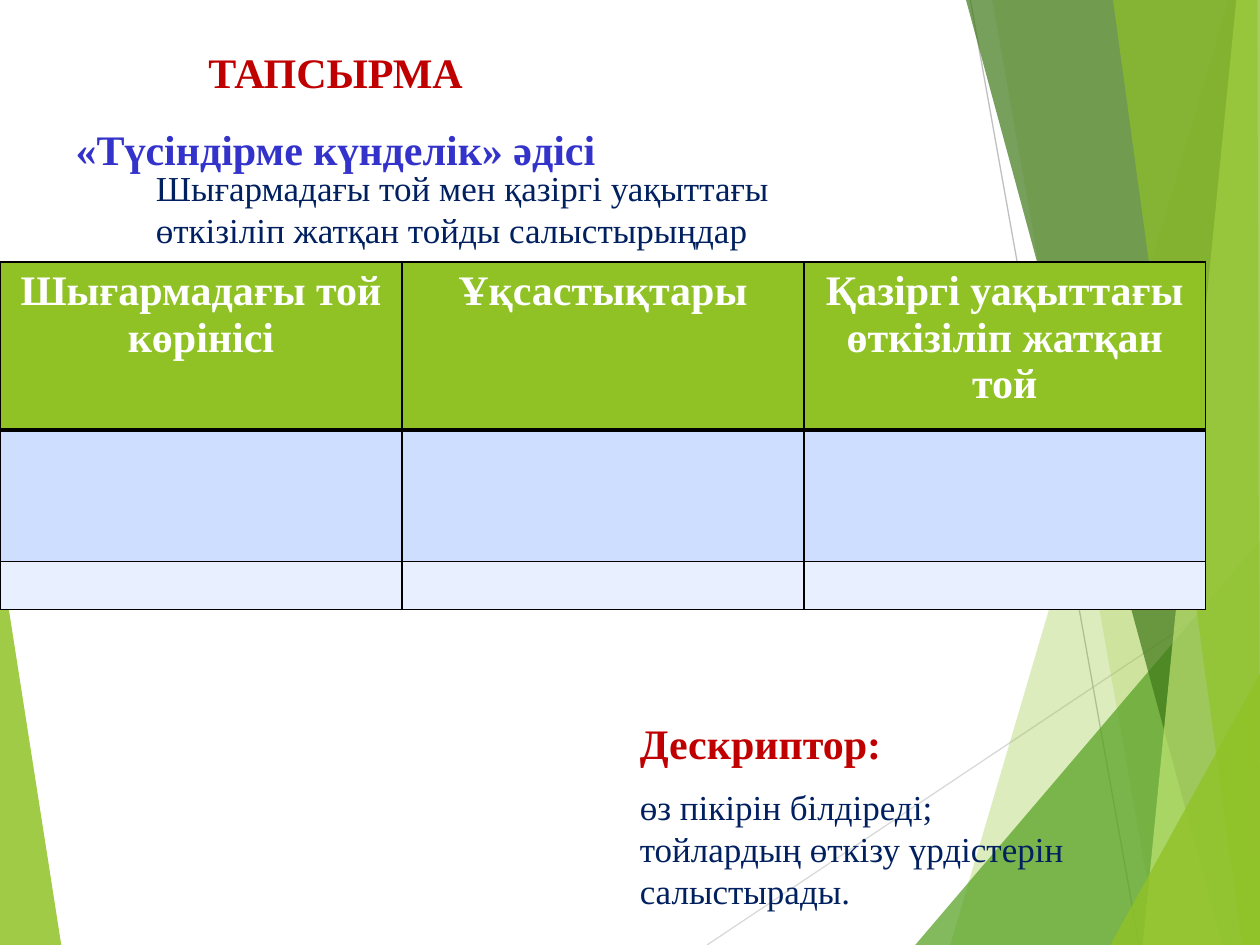
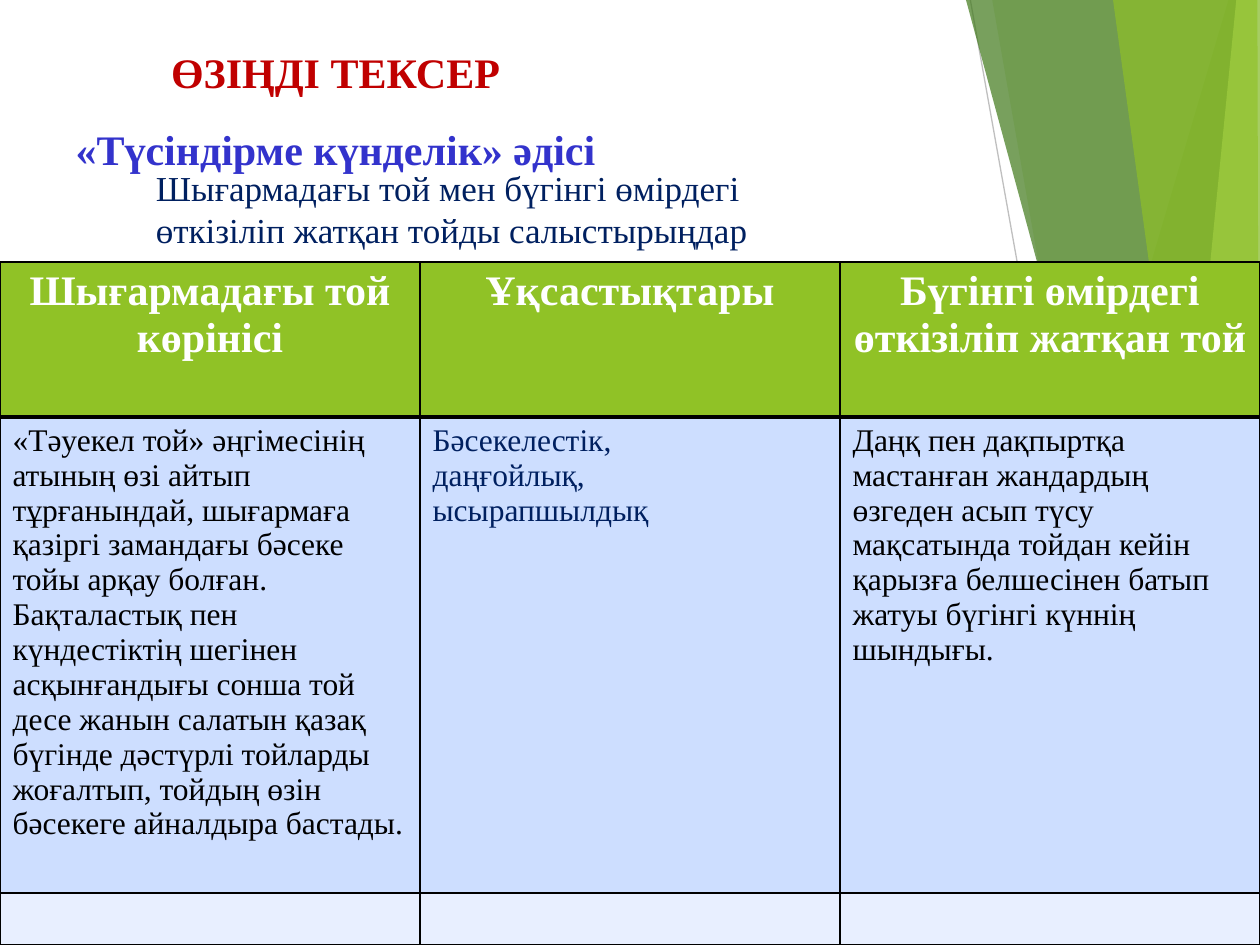
from lxml import etree
from pptx import Presentation
from pptx.dml.color import RGBColor
from pptx.enum.shapes import MSO_CONNECTOR
from pptx.enum.text import PP_ALIGN
from pptx.oxml.ns import qn
from pptx.util import Pt

STRAIGHT = MSO_CONNECTOR.STRAIGHT
CENTER, LEFT = PP_ALIGN.CENTER, PP_ALIGN.LEFT
FONT = "Times New Roman"
COLORS = {
    "lime": "90C226", "green": "54A021", "forest": "3F7819", "pale": "C0E474",
    "red": "C00000", "blue": "3333CC", "navy": "002060",
    "white": "FFFFFF", "black": "000000",
    "band": "CDDEFF", "light_band": "E8EFFF",
    "ray": "D9D9D9", "dark_ray": "BFBFBF",
}

# Background facets: colour, opacity in percent, corners
FACETS = [
    ("lime", 85, [(0, 316), (35, 540), (0, 540)]),
    ("lime", 30, [(702, 0), (543, 540), (720, 540), (720, 0)]),
    ("lime", 20, [(567, 0), (662, 540), (720, 540), (720, 0)]),
    ("green", 72, [(523, 540), (720, 309), (720, 540)]),
    ("forest", 70, [(552, 0), (698.5, 540), (720, 540), (720, 0)]),
    ("pale", 70, [(706.5, 0), (653, 540), (720, 540), (720, 0)]),
    ("lime", 65, [(636, 0), (710, 540), (720, 540), (718.5, 0)]),
    ("lime", 80, [(634.5, 540), (720, 385), (720, 540)]),
]
RAYS = [("ray", (404, 540, 720, 329)), ("dark_ray", (554.5, 0, 651, 540))]

# Text styles: colour, alignment and font attributes
STYLES = {
    "title": ("red", CENTER, {"size": Pt(24), "bold": True}),
    "method": ("blue", CENTER, {"size": Pt(24), "bold": True}),
    "heading": ("red", LEFT, {"size": Pt(24), "bold": True}),
    "task": ("navy", LEFT, {"size": Pt(20), "bold": False}),
    "header": ("white", CENTER, {"size": Pt(24), "bold": True}),
    "answer": ("black", LEFT, {"size": Pt(18), "bold": False}),
    "key_answer": ("navy", LEFT, {"size": Pt(18), "bold": False}),
}
METHOD = "«Түсіндірме күнделік» әдісі"
ROW_FILLS = ["lime", "band", "light_band"]

SLIDES = [
    {
        "title": "ТАПСЫРМА",
        "task": "Шығармадағы той мен қазіргі уақыттағы өткізіліп жатқан тойды салыстырыңдар",
        "headers": ["Шығармадағы той көрінісі", "Ұқсастықтары",
                    "Қазіргі уақыттағы өткізіліп жатқан той"],
        "answers": [],
        "table_width": 689,
        "row_heights": [96, 75, 27.5],
        "descriptor": ["Дескриптор:",
                       "өз пікірін білдіреді;\vтойлардың өткізу үрдістерін салыстырады."],
    },
    {
        "title": "ӨЗІҢДІ ТЕКСЕР",
        "task": "Шығармадағы той мен бүгінгі өмірдегі өткізіліп жатқан тойды салыстырыңдар",
        "headers": ["Шығармадағы той көрінісі", "Ұқсастықтары",
                    "Бүгінгі өмірдегі өткізіліп жатқан той"],
        "answers": [
            "«Тәуекел той» әңгімесінің атының өзі айтып тұрғанындай, шығармаға "
            "қазіргі замандағы бәсеке тойы арқау болған. Бақталастық пен "
            "күндестіктің шегінен асқынғандығы сонша той десе жанын салатын қазақ "
            "бүгінде дәстүрлі тойларды жоғалтып, тойдың өзін бәсекеге айналдыра "
            "бастады.",
            "Бәсекелестік,\nдаңғойлық,\nысырапшылдық",
            "Даңқ пен дақпыртқа мастанған жандардың өзгеден асып түсу мақсатында "
            "тойдан кейін қарызға белшесінен батып жатуы бүгінгі күннің шындығы.",
        ],
        "table_width": 720,
        "row_heights": [88.5, 272, 29.5],
        "descriptor": [],
    },
]


def rgb(name):
    return RGBColor.from_string(COLORS[name])


def write(frame, lines, gap=0):
    """Fill a text frame with (style, text) paragraphs, gap points apart."""
    frame.word_wrap = True
    for index, (style, text) in enumerate(lines):
        paragraph = frame.add_paragraph() if index else frame.paragraphs[0]
        paragraph.text = text
        color, paragraph.alignment, font_format = STYLES[style]
        if index:
            paragraph.space_before = Pt(gap)
        if style == "task":
            paragraph.line_spacing = Pt(24)
        for run in paragraph.runs:
            run.font.name = FONT
            run.font.color.rgb = rgb(color)
            for attribute, value in font_format.items():
                setattr(run.font, attribute, value)


prs = Presentation()
prs.slide_width, prs.slide_height = Pt(720), Pt(540)

for content in SLIDES:
    slide = prs.slides.add_slide(prs.slide_layouts[6])
    shapes = slide.shapes

    # Background
    for color, ends in RAYS:
        ray = shapes.add_connector(STRAIGHT, *map(Pt, ends))
        ray.line.color.rgb = rgb(color)
        ray.line.width = Pt(0.75)
        etree.SubElement(ray._element.spPr, qn("a:effectLst"))
    for color, opacity, corners in FACETS:
        start, *others = [(Pt(x), Pt(y)) for x, y in corners]
        builder = shapes.build_freeform(*start)
        builder.add_line_segments(others)
        facet = builder.convert_to_shape()
        facet.shadow.inherit = False
        facet.line.fill.background()
        facet.fill.solid()
        facet.fill.fore_color.rgb = rgb(color)
        tint = facet._element.spPr.find(qn("a:solidFill"))[0]
        etree.SubElement(tint, qn("a:alpha"), val=str(opacity * 1000))

    # Comparison table
    heights = content["row_heights"]
    table = shapes.add_table(3, 3, Pt(0), Pt(149.75), Pt(content["table_width"]),
                             Pt(sum(heights))).table
    for column in table.columns:
        column.width = Pt(content["table_width"] / 3)
    for row_index, (row, height) in enumerate(zip(table.rows, heights)):
        row.height = Pt(height)
        for cell in row.cells:
            properties = cell._tc.get_or_add_tcPr()
            for side in "LRTB":
                thick = (row_index, side) in [(0, "B"), (1, "T")]
                border = etree.SubElement(properties, qn(f"a:ln{side}"),
                                          w=str(Pt(3 if thick else 1)))
                fill = etree.SubElement(border, qn("a:solidFill"))
                etree.SubElement(fill, qn("a:srgbClr"), val=COLORS["black"])
            cell.fill.solid()
            cell.fill.fore_color.rgb = rgb(ROW_FILLS[row_index])
            if row_index == 2:
                cell.margin_top = cell.margin_bottom = 0
    for column, text in enumerate(content["headers"]):
        write(table.cell(0, column).text_frame, [("header", text)])
    for column, text in enumerate(content["answers"]):
        style = "key_answer" if column == 1 else "answer"
        write(table.cell(1, column).text_frame,
              [(style, line) for line in text.split("\n")])

    # Title, task and descriptor
    title_box = shapes.add_textbox(Pt(25), Pt(23), Pt(333.5), Pt(78))
    write(title_box.text_frame,
          [("title", content["title"]), ("method", METHOD)], gap=15)
    task_box = shapes.add_textbox(Pt(82), Pt(91.5), Pt(388), Pt(56))
    write(task_box.text_frame, [("task", content["task"])])
    if content["descriptor"]:
        descriptor_box = shapes.add_textbox(Pt(358.5), Pt(406.5), Pt(347), Pt(118))
        write(descriptor_box.text_frame,
              zip(["heading", "task"], content["descriptor"]), gap=10)

prs.save("out.pptx")
